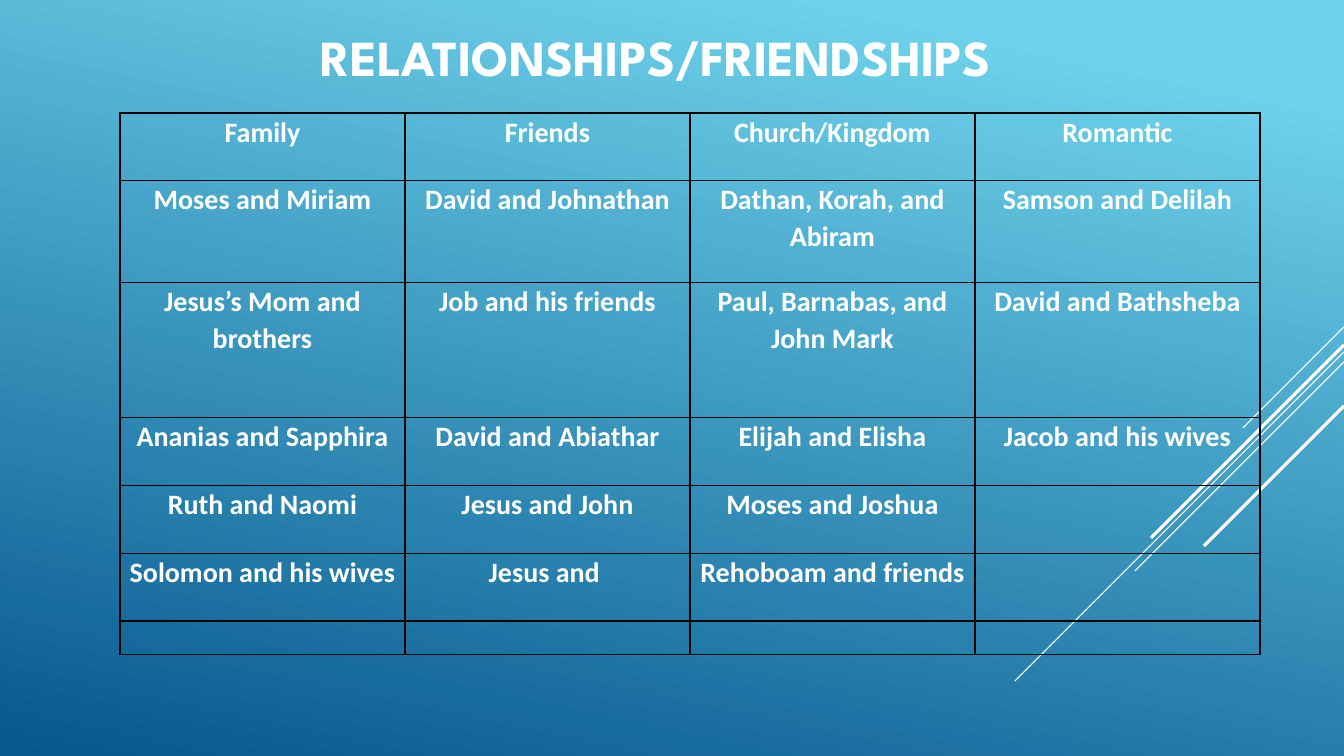
import pptx
import pptx.util
import pptx.dml.color
import pptx.enum.shapes
import pptx.enum.text
import pptx.oxml
import pptx.oxml.ns

SCALE = 914400 / 100.8
INK = {"sky": "6ED2EB", "deep": "06588E", "text": "FFFFFF", "grid": "000000"}
ALIGN = pptx.enum.text.PP_ALIGN
ANCHOR = pptx.enum.text.MSO_ANCHOR

# Row weights beside the four cells of each row
ROWS = [
    (2, ["Family", "Friends", "Church/Kingdom", "Romantic"]),
    (3, ["Moses and Miriam", "David and Johnathan", "Dathan, Korah, and Abiram", "Samson and Delilah"]),
    (4, ["Jesus’s Mom and brothers", "Job and his friends", "Paul, Barnabas, and John Mark",
         "David and Bathsheba"]),
    (2, ["Ananias and Sapphira", "David and Abiathar", "Elijah and Elisha", "Jacob and his wives"]),
    (2, ["Ruth and Naomi", "Jesus and John", "Moses and Joshua", ""]),
    (2, ["Solomon and his wives", "Jesus and ", "Rehoboam and friends", ""]),
    (1, ["", "", "", ""]),
]

# Diagonal rays: start height on the right edge, run to lower left, width in pt
RAYS = [(327, 101, 0.75), (352, 329, 0.75), (362, 209, 0.75), (345, 193, 2.25), (406, 140, 2.25)]


def px(size):
    return pptx.util.Emu(round(size * SCALE))


def tint(name):
    return pptx.dml.color.RGBColor.from_string(INK[name])


def style(par, face, size):
    par.alignment = ALIGN.CENTER
    for run in par.runs:
        run.font.name = face
        run.font.size = pptx.util.Pt(size)
        run.font.bold = True
        run.font.color.rgb = tint("text")


def back(slide):
    fill = slide.background.fill
    fill.gradient()
    fill.gradient_angle = 258  # counter-clockwise
    for stop, (name, pos) in zip(fill.gradient_stops, [("sky", 0.1), ("deep", 1)]):
        stop.color.rgb = tint(name)
        stop.position = pos


def rays(slide, right):
    for top, run, width in RAYS:
        line = slide.shapes.add_connector(
            pptx.enum.shapes.MSO_CONNECTOR.STRAIGHT,
            px(right), px(top), px(right - run), px(top + run))
        line.line.color.rgb = tint("text")
        line.line.width = pptx.util.Pt(width)
        props = line._element.spPr
        props.append(pptx.oxml.parse_xml(f'<a:effectLst {pptx.oxml.ns.nsdecls("a")}/>'))


def title(slide, left, top, width, height):
    frame = slide.shapes.add_textbox(px(left), px(top), px(width), px(height)).text_frame
    frame.word_wrap = True
    frame.vertical_anchor = ANCHOR.MIDDLE
    frame.text = "RELATIONSHIPS/FRIENDSHIPS"
    style(frame.paragraphs[0], "League Spartan", 36)


def border(cell):
    props = cell._tc.get_or_add_tcPr()
    for spot, side in enumerate("LRTB"):
        props.insert(spot, pptx.oxml.parse_xml(
            f'<a:ln{side} {pptx.oxml.ns.nsdecls("a")} w="12700"><a:solidFill>'
            f'<a:srgbClr val="{INK["grid"]}"/></a:solidFill></a:ln{side}>'))


def grid(slide, left, top, width, height):
    count = len(ROWS[0][1])
    table = slide.shapes.add_table(
        len(ROWS), count, px(left), px(top), px(width), px(height)).table
    table.first_row = table.horz_banding = False
    for col in table.columns:
        col.width = px(width / count)
    total = sum(weight for weight, _ in ROWS)
    for row, (weight, words) in zip(table.rows, ROWS):
        row.height = px(height * weight / total)
        for cell, word in zip(row.cells, words):
            cell.fill.background()
            border(cell)
            cell.margin_left = cell.margin_right = px(7)
            cell.margin_top = cell.margin_bottom = 0
            cell.text = word
            par = cell.text_frame.paragraphs[0]
            par.line_spacing = 1.07
            style(par, "Calibri", 20)


def main():
    deck = pptx.Presentation()
    deck.slide_width, deck.slide_height = px(1344), px(756)
    slide = deck.slides.add_slide(deck.slide_layouts[6])
    back(slide)
    rays(slide, 1344)
    title(slide, 186, 0, 940, 112)
    grid(slide, 120, 113, 1140, 542)
    deck.save("out.pptx")


if __name__ == "__main__":
    main()
